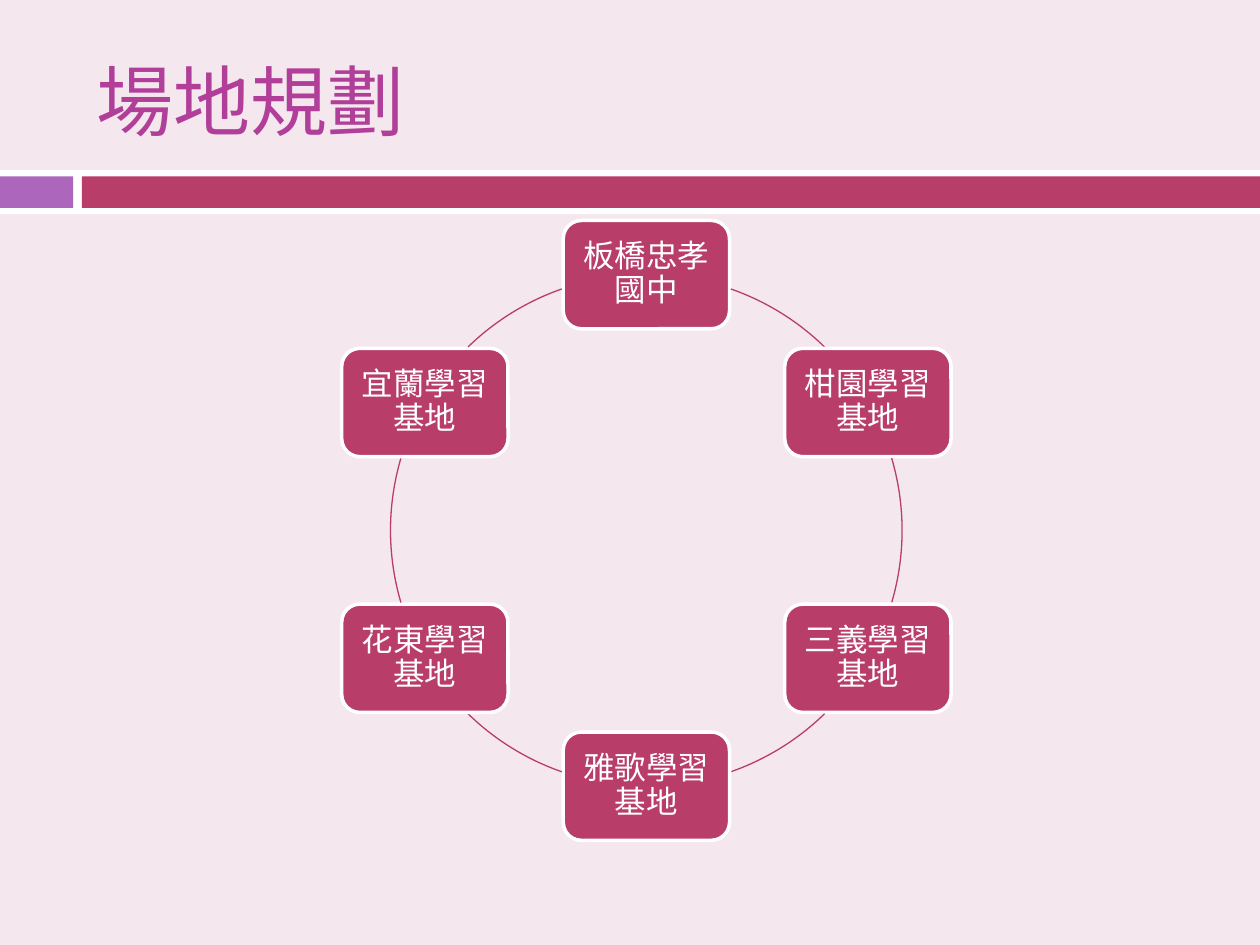
"""Build the venue planning slide: a ring of six sites."""
import math

from pptx import Presentation
from pptx import util as u
from pptx.dml.color import RGBColor
from pptx.enum import shapes, text

FONT = "TeX Gyre Pagella"
ROSE, WHITE = "B83D68", "FFFFFF"
SITES = ["板橋忠孝國中", "柑園學習基地", "三義學習基地",
         "雅歌學習基地", "花東學習基地", "宜蘭學習基地"]
MID_X, MID_Y, RADIUS = 5.13, 4.21, 2.03
BOX_W, BOX_H = 1.32, 0.86
SPANS = [(289.3, 314.2), (343.6, 16.4), (45.8, 70.7)]


def color(code):
    """Turn a hex string into a colour."""
    return RGBColor.from_string(code)


def write(shape, words, size, ink, align=text.PP_ALIGN.LEFT, inset=0.1, space=1.0):
    """Put formatted, vertically centred text into a shape."""
    frame = shape.text_frame
    frame.word_wrap = True
    frame.vertical_anchor = text.MSO_ANCHOR.MIDDLE
    frame.margin_left = frame.margin_right = u.Inches(inset)
    frame.margin_top = frame.margin_bottom = u.Inches(min(inset, 0.07))
    para = frame.paragraphs[0]
    para.alignment, para.line_spacing = align, space
    run = para.add_run()
    run.text = words
    run.font.name, run.font.size = FONT, u.Pt(size)
    run.font.color.rgb = color(ink)


def draw(slide, kind, at, fill=None, line=None, width=1):
    """Add a preset shape with an optional fill and outline."""
    shape = slide.shapes.add_shape(kind, *map(u.Inches, at))
    shape.shadow.inherit = False
    if fill:
        shape.fill.solid()
        shape.fill.fore_color.rgb = color(fill)
    else:
        shape.fill.background()
    if line:
        shape.line.color.rgb = color(line)
        shape.line.width = u.Pt(width)
    else:
        shape.line.fill.background()
    return shape


def add_band(slide):
    """Add the striped band below the title."""
    for left, top, wide, high, fill in [(0, 1.35, 10, 0.35, WHITE),
                                        (0, 1.4, 0.58, 0.25, "AC66BB"),
                                        (0.65, 1.4, 9.35, 0.25, ROSE)]:
        draw(slide, shapes.MSO_SHAPE.RECTANGLE, (left, top, wide, high), fill)


def add_arc(slide, start, end):
    """Add one piece of the ring between two angles in degrees."""
    at = (MID_X - RADIUS, MID_Y - RADIUS, 2 * RADIUS, 2 * RADIUS)
    arc = draw(slide, shapes.MSO_SHAPE.ARC, at, line=ROSE, width=0.75)
    for i, angle in enumerate((start, end)):
        arc.adjustments[i] = angle % 360 * 0.6


def add_site(slide, name, angle):
    """Add a site box centred on the ring."""
    left = MID_X + RADIUS * math.cos(angle) - BOX_W / 2
    top = MID_Y + RADIUS * math.sin(angle) - BOX_H / 2
    box = draw(slide, shapes.MSO_SHAPE.ROUNDED_RECTANGLE,
               (left, top, BOX_W, BOX_H), ROSE, WHITE, 2)
    write(box, name, 18, WHITE, align=text.PP_ALIGN.CENTER, inset=0.07, space=0.9)


def main():
    """Build and save the slide."""
    deck = Presentation()
    deck.slide_width, deck.slide_height = u.Inches(10), u.Inches(7.5)
    slide = deck.slides.add_slide(deck.slide_layouts[6])
    slide.background.fill.solid()
    slide.background.fill.fore_color.rgb = color("F4E7ED")
    add_band(slide)
    title = slide.shapes.add_textbox(*map(u.Inches, (0.67, 0.25, 8.92, 1.08)))
    write(title, "場地規劃", 44, "B13F9A")
    for i, name in enumerate(SITES):
        add_site(slide, name, math.radians(60 * i - 90))
        start, end = SPANS[i % 3]
        turn = 180 * (i // 3)
        add_arc(slide, start + turn, end + turn)
    deck.save("out.pptx")


if __name__ == "__main__":
    main()
